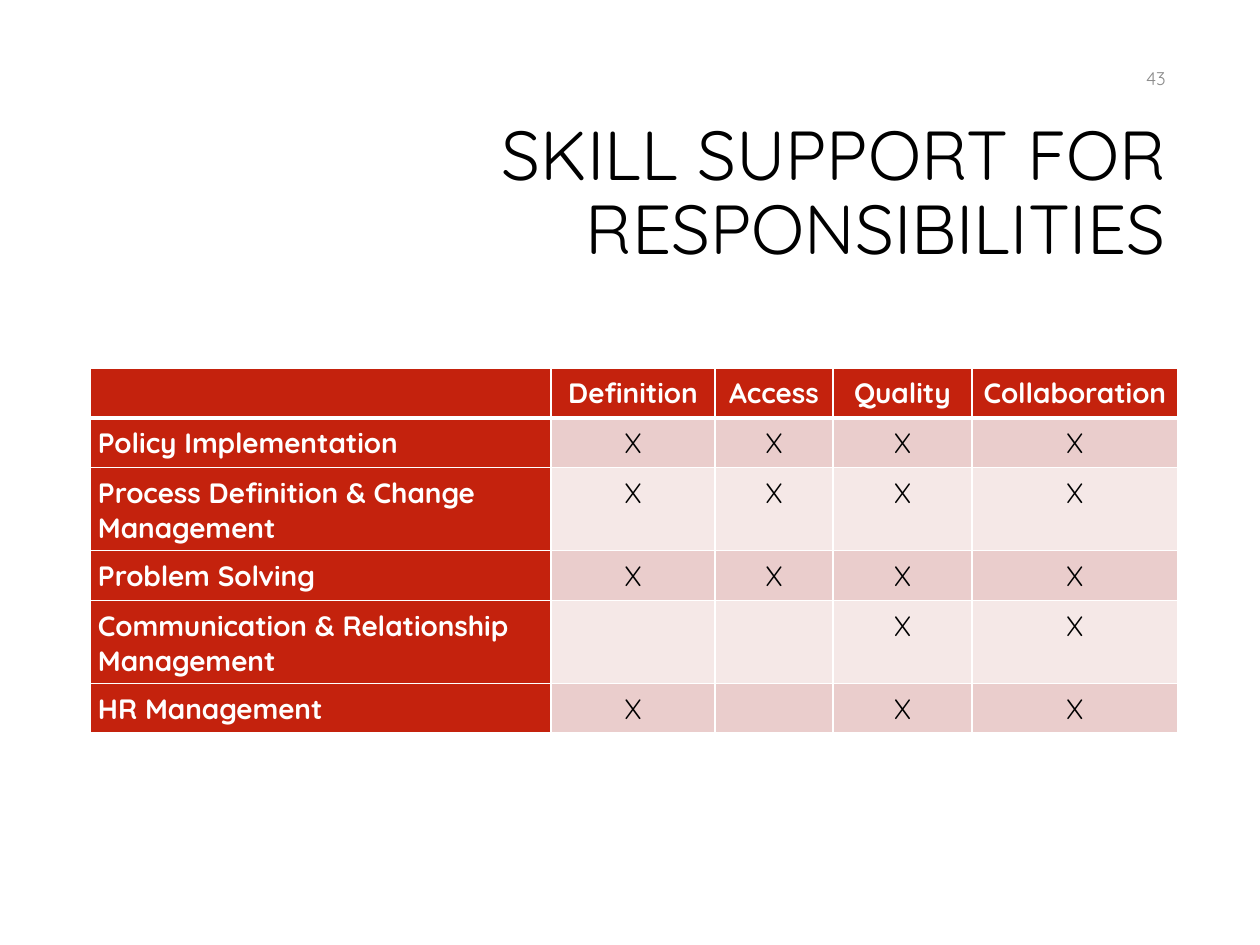
from lxml import etree
from pptx import Presentation
from pptx.dml.color import RGBColor
from pptx.enum.text import MSO_ANCHOR, PP_ALIGN
from pptx.oxml.ns import qn
from pptx.util import Emu, Pt

LEFT, CENTER, RIGHT = PP_ALIGN.LEFT, PP_ALIGN.CENTER, PP_ALIGN.RIGHT
MIDDLE = MSO_ANCHOR.MIDDLE
RED = RGBColor(0xC4, 0x22, 0x0D)
BANDS = (RGBColor(0xEA, 0xCD, 0xCC), RGBColor(0xF5, 0xE8, 0xE7))
BLACK = RGBColor(0, 0, 0)
WHITE = RGBColor(0xFF, 0xFF, 0xFF)
GRAY = RGBColor(0x8C, 0x8C, 0x8C)
FONT = "Quicksand"
CELL_SIZE = Pt(16)

TEXTS = [
    ("SKILL SUPPORT FOR RESPONSIBILITIES", (300, 106, 878, 178), 0.9,
     {"size": Pt(39.6), "color": BLACK}),
    ("43", (906, 53, 272, 50), 1.0, {"size": Pt(10.5), "color": GRAY}),
]
ROWS = [
    ("", "Definition", "Access", "Quality", "Collaboration"),
    ("Policy Implementation", "X", "X", "X", "X"),
    ("Process Definition & Change Management", "X", "X", "X", "X"),
    ("Problem Solving", "X", "X", "X", "X"),
    ("Communication & Relationship Management", "", "", "X", "X"),
    ("HR Management", "X", "", "X", "X"),
]
COL_WIDTHS = (461, 164, 118, 139, 206)
ROW_HEIGHTS = (50, 48, 81, 48, 81, 48)
TABLE_LEFT, TABLE_TOP = 90, 368


def px(n):
    return Emu(n * 914400 // 126)


def add_run(p, text, size, color, bold=False):
    r = p.add_run()
    r.text = text
    for name, value in {"name": FONT, "size": size, "bold": bold}.items():
        setattr(r.font, name, value)
    r.font.color.rgb = color


def add_border(cell, side, width):
    ln = etree.SubElement(cell._tc.get_or_add_tcPr(), qn(f"a:ln{side}"), w=str(Pt(width)))
    fill = etree.SubElement(ln, qn("a:solidFill"))
    etree.SubElement(fill, qn("a:srgbClr"), val=str(WHITE))


def fill_cell(cell, text, row, col):
    heading = row == 0 or col == 0
    for side in "LRTB":
        thick = (row, side) in ((0, "B"), (1, "T"))
        add_border(cell, side, 3 if thick else 1)
    cell.fill.solid()
    cell.fill.fore_color.rgb = RED if heading else BANDS[(row - 1) % 2]
    for edge in ("left", "right", "top", "bottom"):
        setattr(cell, f"margin_{edge}", px(8))
    p = cell.text_frame.paragraphs[0]
    p.alignment = CENTER if col else LEFT
    if text:
        add_run(p, text, CELL_SIZE, WHITE if heading else BLACK, heading)
    else:
        etree.SubElement(p._p, qn("a:endParaRPr"), sz=str(int(CELL_SIZE.pt * 100)))


def main():
    prs = Presentation()
    prs.slide_width, prs.slide_height = px(1260), px(945)
    s = prs.slides.add_slide(prs.slide_layouts[6])

    for text, box, spacing, style in TEXTS:
        tf = s.shapes.add_textbox(*map(px, box)).text_frame
        tf.word_wrap = True
        tf.vertical_anchor = MIDDLE
        p = tf.paragraphs[0]
        p.alignment = RIGHT
        p.line_spacing = spacing
        add_run(p, text, **style)

    table = s.shapes.add_table(
        len(ROWS), len(COL_WIDTHS), px(TABLE_LEFT), px(TABLE_TOP),
        px(sum(COL_WIDTHS)), px(sum(ROW_HEIGHTS))).table
    table.first_col = True
    for column, width in zip(table.columns, COL_WIDTHS):
        column.width = px(width)
    for i, (values, height) in enumerate(zip(ROWS, ROW_HEIGHTS)):
        table.rows[i].height = px(height)
        for j, text in enumerate(values):
            fill_cell(table.cell(i, j), text, i, j)

    prs.save("out.pptx")


if __name__ == "__main__":
    main()
